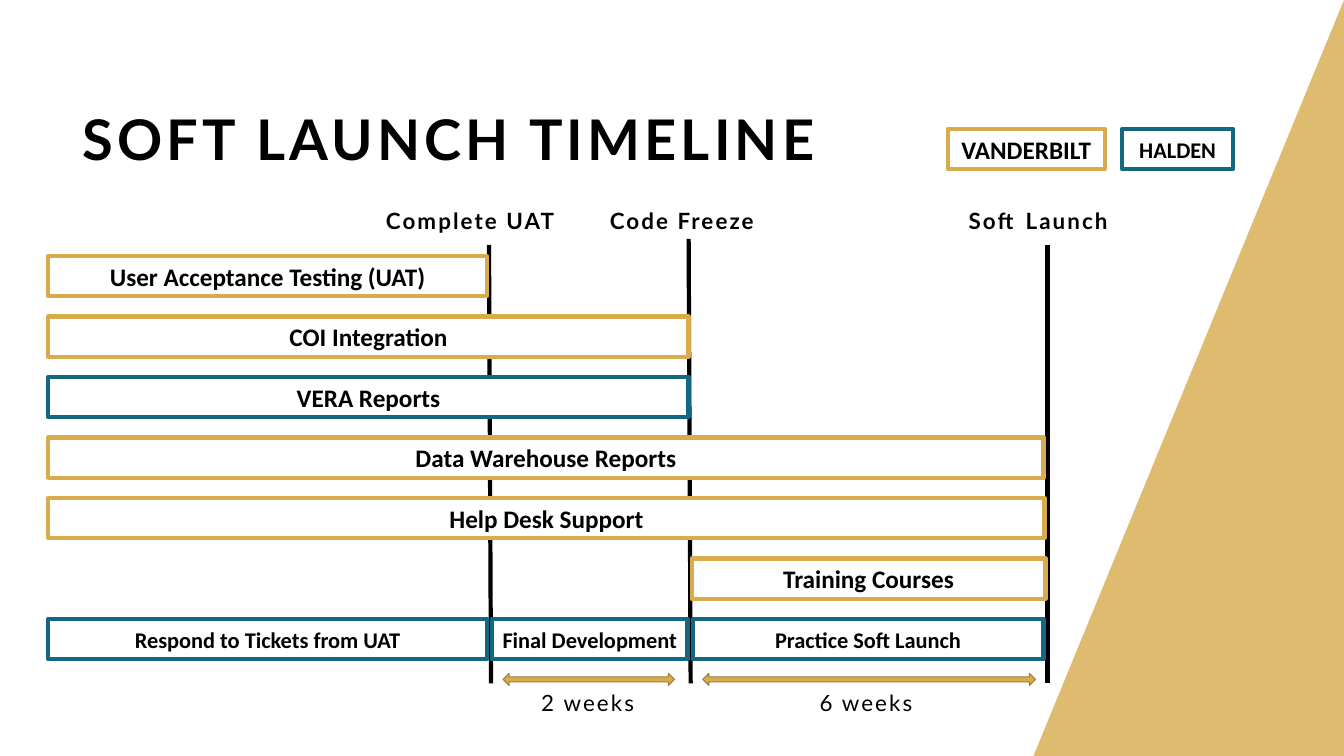
from lxml import etree
from pptx import Presentation
from pptx import util as u
from pptx.dml.color import RGBColor
from pptx.enum import shapes, text
from pptx.oxml.ns import qn

PX = u.Inches(1) // 100
GOLD, TEAL, BLACK, WHITE = "D8AB4C", "136783", "000000", "FFFFFF"


def paint(fill, color):
    fill.solid()
    fill.fore_color.rgb = RGBColor.from_string(color)


def write(sp, words, size, font, bold=True, spacing=0):
    p = sp.text_frame.paragraphs[0]
    p.text = words
    p.font.size, p.font.name, p.font.bold = u.Pt(size), font, bold
    paint(p.font.fill, BLACK)
    if spacing:
        p.runs[0].font._element.set("spc", str(spacing))
    return p


prs = Presentation()
prs.slide_width, prs.slide_height = 1333 * PX, 750 * PX
s = prs.slides.add_slide(prs.slide_layouts[5])
paint(s.background.fill, WHITE)

builder = s.shapes.build_freeform(1333, 0, scale=PX)
builder.add_line_segments([(1333, 750), (1025, 750)], close=True)
corner = builder.convert_to_shape()
corner.shadow.inherit = False
paint(corner.fill, GOLD)
corner.line.fill.background()
clr = corner._element.spPr.find(qn("a:solidFill"))[0]
etree.SubElement(clr, qn("a:alpha"), val="80000")

title = s.shapes.title
title.left, title.top, title.width, title.height = [n * PX for n in (72, 31, 1220, 145)]
title.text_frame.auto_size = text.MSO_AUTO_SIZE.NONE
title.text_frame.vertical_anchor = text.MSO_ANCHOR.BOTTOM
p = write(title, "SOFT LAUNCH TIMELINE", 40, "Lato", spacing=300)
p.alignment = text.PP_ALIGN.LEFT
p.line_spacing = 0.9

for x1, y1, x2 in [(683, 237, 685), (485, 243, 487), (1039, 243, 1039)]:
    milestone = s.shapes.add_connector(
        shapes.MSO_CONNECTOR.STRAIGHT, x1 * PX, y1 * PX, x2 * PX, 678 * PX)
    milestone.line.width = u.Pt(3)
    paint(milestone.line.fill, BLACK)
    etree.SubElement(milestone._element.spPr, qn("a:effectLst"))

ROW_TOP, ROW_STEP = 254, 60
tasks = [
    (0, 48, 435, GOLD, 18, "User Acceptance Testing (UAT)"),
    (1, 48, 635, GOLD, 18, "COI Integration"),
    (2, 48, 635, TEAL, 18, "VERA Reports"),
    (3, 48, 987, GOLD, 18, "Data Warehouse Reports"),
    (4, 48, 988, GOLD, 18, "Help Desk Support"),
    (5, 686, 351, GOLD, 18, "Training Courses"),
    (6, 48, 435, TEAL, 16, "Respond to Tickets from UAT"),
    (6, 488, 194, TEAL, 16, "Final Development"),
    (6, 687, 348, TEAL, 16, "Practice Soft Launch"),
]
bars = [(x, ROW_TOP + row * ROW_STEP, *rest) for row, x, *rest in tasks]
legend = [(940, 128, 156, GOLD, 18, "VANDERBILT"), (1113, 128, 110, TEAL, 16, "HALDEN")]
for x, y, w, color, size, words in bars + legend:
    bar = s.shapes.add_shape(shapes.MSO_SHAPE.RECTANGLE, x * PX, y * PX, w * PX, 40 * PX)
    bar.shadow.inherit = False
    paint(bar.fill, WHITE)
    paint(bar.line.fill, color)
    bar.line.width = u.Pt(3)
    bar.text_frame.vertical_anchor = text.MSO_ANCHOR.MIDDLE
    write(bar, words, size, "Calibri").alignment = text.PP_ALIGN.CENTER

for x, w in [(499, 170), (697, 330)]:
    span = s.shapes.add_shape(
        shapes.MSO_SHAPE.LEFT_RIGHT_ARROW, x * PX, 668 * PX, w * PX, 12 * PX)
    span.adjustments[0], span.adjustments[1] = 0.4, 0.5
    span.shadow.inherit = False
    paint(span.fill, GOLD)
    paint(span.line.fill, "A07F38")
    span.line.width = u.Pt(0.75)

for x, y, w, bold, words in [
    (373, 201, 205, True, "Complete UAT"),
    (595, 201, 181, True, "Code Freeze"),
    (951, 201, 177, True, "Soft Launch"),
    (527, 679, 116, False, "2 weeks"),
    (803, 679, 116, False, "6 weeks"),
]:
    label = s.shapes.add_textbox(x * PX, y * PX, w * PX, 37 * PX)
    label.text_frame.word_wrap = False
    label.text_frame.auto_size = text.MSO_AUTO_SIZE.SHAPE_TO_FIT_TEXT
    write(label, words, 16, "Lato", bold, 150)

prs.save("out.pptx")
